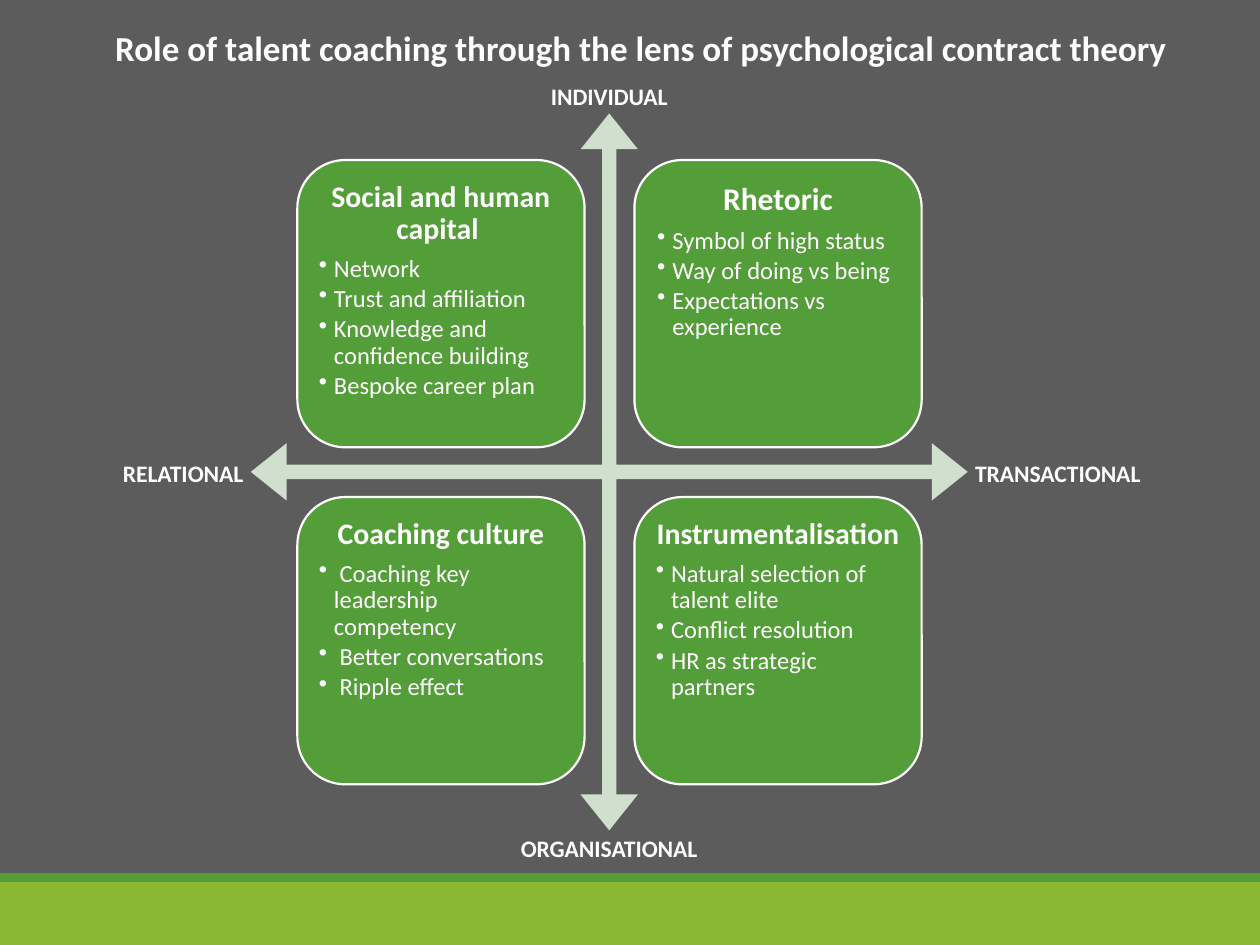
"""Builds a slide with a four-quadrant matrix of talent coaching roles."""
from dataclasses import dataclass

from lxml import etree
from pptx import Presentation
from pptx import util as u
from pptx.dml.color import RGBColor
from pptx.enum import shapes, text
from pptx.oxml import ns

GREY = RGBColor(0x5C, 0x5C, 0x5C)
GREEN = RGBColor(0x54, 0x9E, 0x39)
LIME = RGBColor(0x8A, 0xB8, 0x33)
PALE_GREEN = RGBColor(0xD1, 0xDF, 0xCE)
WHITE = RGBColor(0xFF, 0xFF, 0xFF)
FONT = "Calibri"
CARD_LEFT, CARD_TOP, CARD_SIZE, CARD_PITCH = 2.36, 1.27, 2.28, 2.675
BULLET_SIZE, BULLET_INDENT = 14, 0.12


@dataclass
class Card:
    column: int
    row: int
    heading: str
    bullets: list[str]
    heading_size: float = 17
    inset: float = 0.06


@dataclass
class AxisLabel:
    wording: str
    left: float
    top: float
    width: float
    alignment: text.PP_ALIGN


CARDS = [
    Card(0, 0, "Social and human capital ",
         ["Network", "Trust and affiliation", "Knowledge and confidence building",
          "Bespoke career plan"]),
    Card(1, 0, "Rhetoric",
         ["Symbol of high status", "Way of doing vs being", "Expectations vs experience"],
         heading_size=18, inset=0.07),
    Card(0, 1, "Coaching culture",
         [" Coaching key leadership competency", " Better conversations", " Ripple effect"]),
    Card(1, 1, "Instrumentalisation",
         ["Natural selection of talent elite", "Conflict resolution",
          "HR as strategic partners"]),
]
AXIS_LABELS = [
    AxisLabel("INDIVIDUAL", 3.65, 0.6, 2.37, text.PP_ALIGN.CENTER),
    AxisLabel("ORGANISATIONAL", 3.65, 6.57, 2.37, text.PP_ALIGN.CENTER),
    AxisLabel("RELATIONAL", -0.09, 3.59, 2.12, text.PP_ALIGN.RIGHT),
    AxisLabel("TRANSACTIONAL", 7.64, 3.59, 2.12, text.PP_ALIGN.LEFT),
]


def add_run(paragraph, wording: str, size: float, bold: bool = True) -> None:
    run = paragraph.add_run()
    run.text = wording
    run.font.name = FONT
    run.font.size = u.Pt(size)
    run.font.bold = bold
    run.font.color.rgb = WHITE


def add_filled_shape(slide, kind: shapes.MSO_SHAPE, left: float, top: float,
                     width: float, height: float, color: RGBColor):
    shape = slide.shapes.add_shape(kind, u.Inches(left), u.Inches(top),
                                   u.Inches(width), u.Inches(height))
    shape.shadow.inherit = False
    shape.fill.solid()
    shape.fill.fore_color.rgb = color
    shape.line.fill.background()
    return shape


def add_bullet(paragraph, wording: str) -> None:
    paragraph.alignment = text.PP_ALIGN.LEFT
    paragraph.level = 1
    paragraph.line_spacing = 0.9
    paragraph.space_after = u.Pt(0.15 * BULLET_SIZE)
    properties = paragraph._p.get_or_add_pPr()
    properties.set("marL", str(u.Inches(BULLET_INDENT)))
    properties.set("indent", str(u.Inches(-BULLET_INDENT)))
    etree.SubElement(properties, ns.qn("a:buChar")).set("char", "•")
    add_run(paragraph, wording, BULLET_SIZE, bold=False)


def add_card(slide, card: Card) -> None:
    shape = add_filled_shape(slide, shapes.MSO_SHAPE.ROUNDED_RECTANGLE,
                             CARD_LEFT + card.column * CARD_PITCH,
                             CARD_TOP + card.row * CARD_PITCH,
                             CARD_SIZE, CARD_SIZE, GREEN)
    shape.line.color.rgb = WHITE
    shape.line.width = u.Pt(1.25)
    frame = shape.text_frame
    frame.word_wrap = True
    frame.vertical_anchor = text.MSO_ANCHOR.TOP
    frame.margin_left = frame.margin_right = u.Inches(card.inset)
    frame.margin_top = frame.margin_bottom = u.Inches(card.inset)
    heading = frame.paragraphs[0]
    heading.alignment = text.PP_ALIGN.CENTER
    heading.line_spacing = 0.9
    heading.space_after = u.Pt(0.35 * card.heading_size)
    add_run(heading, card.heading, card.heading_size)
    for wording in card.bullets:
        add_bullet(frame.add_paragraph(), wording)


def add_axis_label(slide, label: AxisLabel) -> None:
    box = slide.shapes.add_textbox(u.Inches(label.left), u.Inches(label.top),
                                   u.Inches(label.width), u.Inches(0.33))
    box.text_frame.word_wrap = True
    paragraph = box.text_frame.paragraphs[0]
    paragraph.alignment = label.alignment
    add_run(paragraph, label.wording, 13.5)


def set_title(slide, wording: str) -> None:
    title = slide.shapes.title
    title.left, title.top = u.Inches(0.72), u.Inches(0.16)
    title.width, title.height = u.Inches(8.8), u.Inches(0.44)
    title.text_frame.auto_size = text.MSO_AUTO_SIZE.NONE
    title.text_frame.vertical_anchor = text.MSO_ANCHOR.TOP
    paragraph = title.text_frame.paragraphs[0]
    paragraph.alignment = text.PP_ALIGN.CENTER
    add_run(paragraph, wording, 20)


def main() -> None:
    presentation = Presentation()
    presentation.slide_width, presentation.slide_height = u.Inches(10), u.Inches(7.5)
    slide = presentation.slides.add_slide(presentation.slide_layouts[5])
    slide.background.fill.solid()
    slide.background.fill.fore_color.rgb = GREY
    set_title(slide, "Role of talent coaching through the lens of "
                     "psychological contract theory ")
    add_filled_shape(slide, shapes.MSO_SHAPE.RECTANGLE, 0, 7, 10, 0.5, LIME)
    add_filled_shape(slide, shapes.MSO_SHAPE.RECTANGLE, 0, 6.93, 10, 0.07, GREEN)
    axes = add_filled_shape(slide, shapes.MSO_SHAPE.QUAD_ARROW,
                            1.99, 0.9, 5.69, 5.69, PALE_GREEN)
    for index, adjustment in enumerate((0.02, 0.04, 0.05)):
        axes.adjustments[index] = adjustment
    for card in CARDS:
        add_card(slide, card)
    for label in AXIS_LABELS:
        add_axis_label(slide, label)
    presentation.save("out.pptx")


if __name__ == "__main__":
    main()
